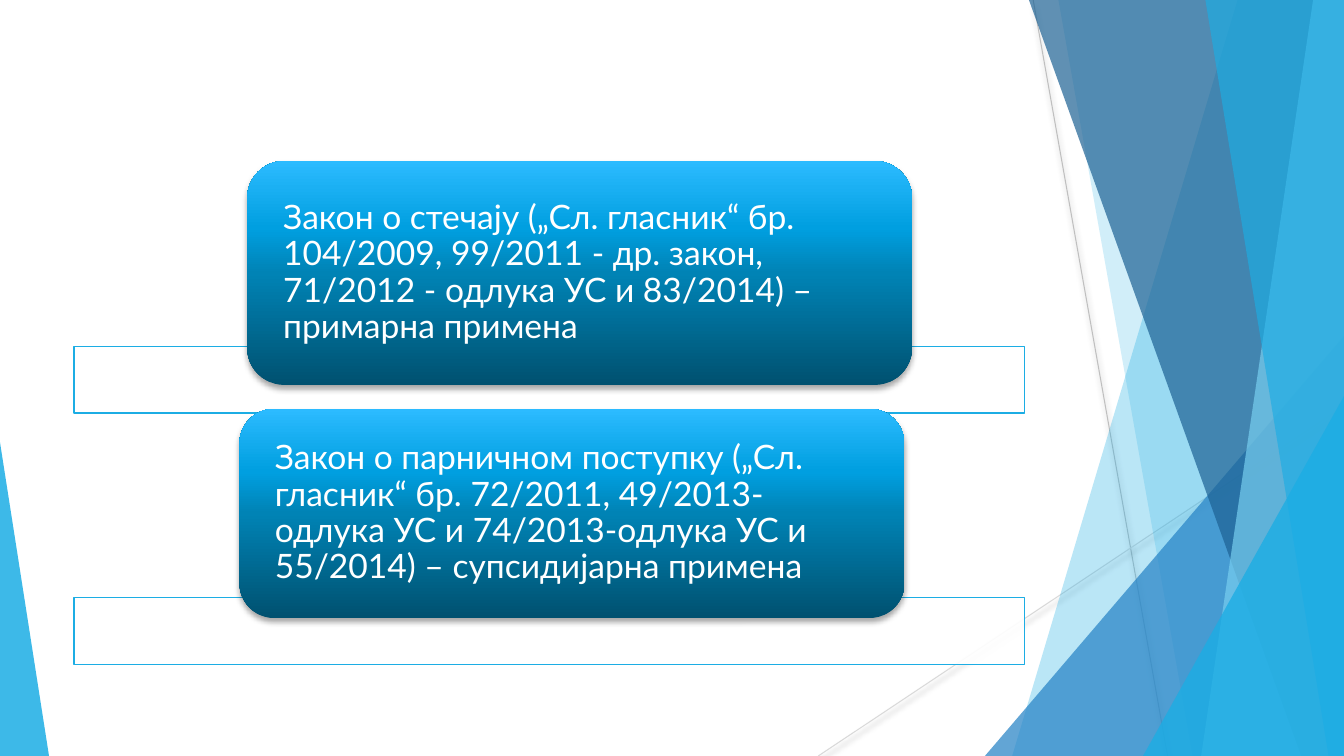
import pptx
import pptx.util
import pptx.dml.color
import pptx.enum.shapes
import pptx.enum.text
import pptx.oxml
import pptx.oxml.ns

Pt = pptx.util.Pt
RGB = pptx.dml.color.RGBColor.from_string
MSO = pptx.enum.shapes.MSO_SHAPE
NS = pptx.oxml.ns.nsdecls("a")
W, H = 960, 540
COLORS = {
    "white": "FFFFFF", "cyan": "1CADE4", "blue": "2683C6", "navy": "1D6294",
    "sky": "77CEEF", "gray": "BFBFBF", "pale": "D9D9D9",
}
PILL_STOPS = {0: "005170", 50: "0083B5", 70: "009FE0", 100: "2CBBFF"}


def style(s, fill=None, alpha=100, line=None, width=1, shadow=False):
    """Set fill with opacity, outline and shadow of a shape or connector."""
    if fill:
        s.fill.solid()
        s.fill.fore_color.rgb = RGB(COLORS[fill])
        clr = s.fill._xPr.find(".//" + pptx.oxml.ns.qn("a:srgbClr"))
        clr.append(pptx.oxml.parse_xml(f'<a:alpha {NS} val="{alpha * 1000}"/>'))
    if line:
        s.line.color.rgb = RGB(COLORS[line])
        s.line.width = Pt(width)
    else:
        s.line.fill.background()
    outer = ('<a:outerShdw blurRad="50800" dist="38100" dir="5400000" rotWithShape="0">'
             '<a:srgbClr val="000000"><a:alpha val="35000"/></a:srgbClr></a:outerShdw>')
    s._element.spPr.append(pptx.oxml.parse_xml(
        f'<a:effectLst {NS}>{outer if shadow else ""}</a:effectLst>'))


def write(s, text, size=24, color="white", font="Lato", inset=18, spacing=0.9):
    tf = s.text_frame
    tf.word_wrap = True
    tf.vertical_anchor = pptx.enum.text.MSO_ANCHOR.MIDDLE
    tf.margin_left = tf.margin_right = Pt(inset)
    tf.margin_top = tf.margin_bottom = 0
    p = tf.paragraphs[0]
    p.alignment = pptx.enum.text.PP_ALIGN.LEFT
    p.line_spacing = spacing
    r = p.add_run()
    r.text = text
    r.font.size = Pt(size)
    r.font.name = font
    r.font.color.rgb = RGB(COLORS[color])


prs = pptx.Presentation()
prs.slide_width, prs.slide_height = Pt(W), Pt(H)
sp = prs.slides.add_slide(prs.slide_layouts[6]).shapes

# Thin crossing lines
for x1, y1, x2, y2, color in [(738, 0, 834, H, "gray"), (W, 290, 584.5, H, "pale")]:
    s = sp.add_connector(pptx.enum.shapes.MSO_CONNECTOR.STRAIGHT,
                         Pt(x1), Pt(y1), Pt(x2), Pt(y2))
    style(s, line=color, width=0.75, shadow=True)

# Translucent facets: bands give top and bottom x of their slanted left edge,
# triangles give left, top, width and apex position
facets = [
    ("band", (884, 723), "cyan", 30),
    ("band", (756, 852), "cyan", 20),
    ("triangle", (703.5, 240, 256.5, 1), "blue", 72),
    ("band", (735, 929.5), "navy", 70),
    ("band", (938, 858), "sky", 70),
    ("band", (861, 949), "cyan", 65),
    ("triangle", (816.5, 283, 143.5, 1), "cyan", 80),
    ("triangle", (0, 316, 35, 0), "cyan", 85),
]
for kind, geometry, color, alpha in facets:
    if kind == "band":
        top_x, bottom_x = geometry
        fb = sp.build_freeform(Pt(top_x), 0)
        fb.add_line_segments([(Pt(W), 0), (Pt(W), Pt(H)), (Pt(bottom_x), Pt(H))])
        s = fb.convert_to_shape()
    else:
        x, y, w, apex = geometry
        s = sp.add_shape(MSO.ISOSCELES_TRIANGLE, Pt(x), Pt(y), Pt(w), Pt(H - y))
        s.adjustments[0] = apex
    style(s, fill=color, alpha=alpha)

# Two laws: a wide outlined bar with a gradient pill over it
laws = [
    (247.5, 176.5, 115, 160,
     "Закон о стечају („Сл. гласник“ бр. 104/2009, 99/2011 - др. закон, "
     "71/2012 - одлука УС и 83/2014) – примарна примена"),
    (427, 171, 292, 149.5,
     "Закон о парничном поступку („Сл. гласник“ бр. 72/2011, 49/2013-одлука УС "
     "и 74/2013-одлука УС и 55/2014) – супсидијарна примена"),
]
stops = "".join(f'<a:gs pos="{pos * 1000}"><a:srgbClr val="{c}"/></a:gs>'
                for pos, c in PILL_STOPS.items())
for bar_y, pill_x, pill_y, pill_h, text in laws:
    s = sp.add_shape(MSO.RECTANGLE, Pt(53), Pt(bar_y), Pt(679), Pt(47.5))
    style(s, fill="white", alpha=90, line="cyan")

    s = sp.add_shape(MSO.ROUNDED_RECTANGLE, Pt(pill_x), Pt(pill_y), Pt(475), Pt(pill_h))
    style(s, fill="cyan", shadow=True)
    solid = s._element.spPr.find(pptx.oxml.ns.qn("a:solidFill"))
    solid.getparent().replace(solid, pptx.oxml.parse_xml(
        f'<a:gradFill {NS} rotWithShape="1"><a:gsLst>{stops}</a:gsLst>'
        '<a:lin ang="16200000" scaled="0"/></a:gradFill>'))
    write(s, text)

prs.save("out.pptx")
